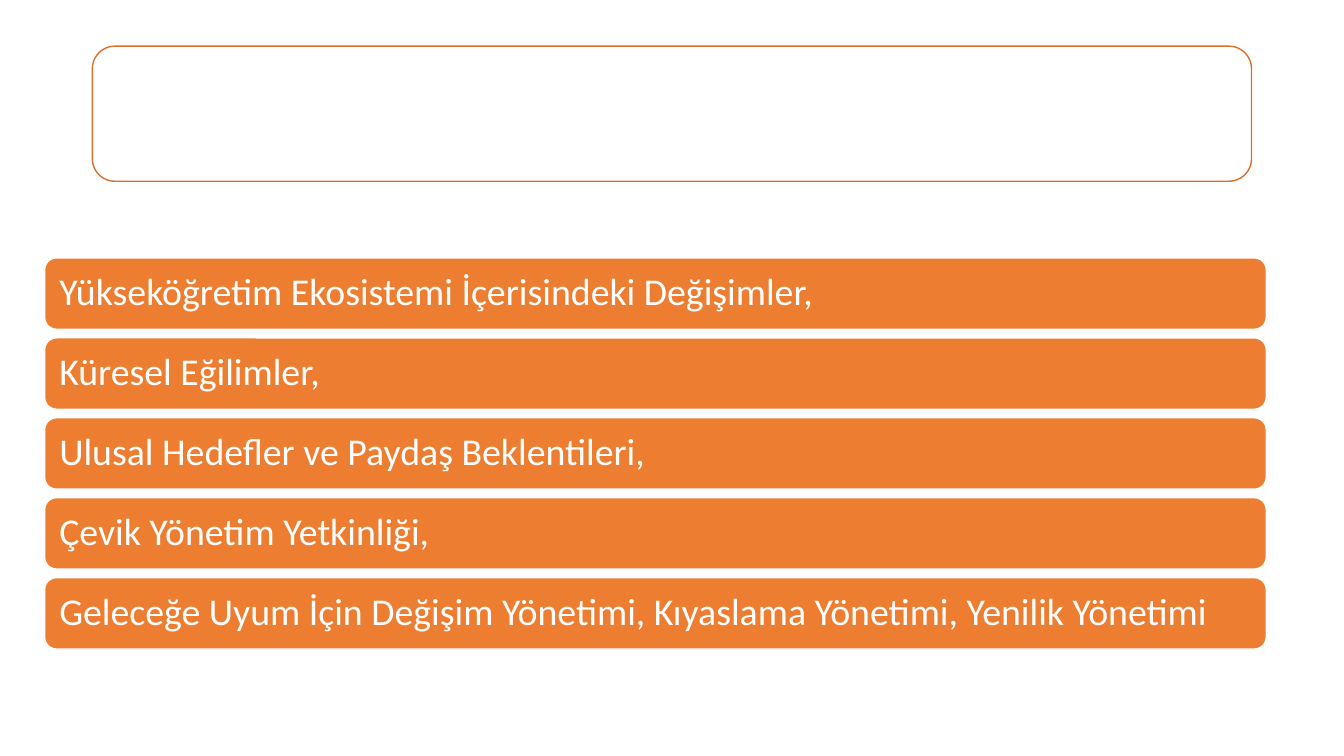
"""Build a slide with an outlined heading frame above five stacked topic bars."""
from dataclasses import dataclass

from pptx import Presentation
from pptx import util as u
from pptx.dml.color import RGBColor
from pptx.enum import shapes, text

COLOURS = {"white": "FFFFFF", "orange": "ED7D31", "rust": "D7712C"}
TOPICS = [
    "Yükseköğretim Ekosistemi İçerisindeki Değişimler,",
    "Küresel Eğilimler,",
    "Ulusal Hedefler ve Paydaş Beklentileri,",
    "Çevik Yönetim Yetkinliği,",
    "Geleceğe Uyum İçin Değişim Yönetimi, Kıyaslama Yönetimi, Yenilik Yönetimi",
]
FIRST_TOP = 184.2
PITCH = 57.1
INSET = u.Pt(8)
FRAME_FORMAT = {
    "word_wrap": True,
    "vertical_anchor": text.MSO_ANCHOR.MIDDLE,
    "margin_left": INSET,
    "margin_right": INSET,
    "margin_top": INSET,
    "margin_bottom": INSET,
}
PARA_FORMAT = {"alignment": text.PP_ALIGN.LEFT, "line_spacing": 0.9}
FONT_FORMAT = {"name": "Calibri", "size": u.Pt(27)}


@dataclass
class Panel:
    left: float
    top: float
    width: float
    height: float
    fill: str
    line: str
    label: str = ""


def colour(name: str) -> RGBColor:
    return RGBColor.from_string(COLOURS[name])


def apply_format(target: object, values: dict) -> None:
    for name, value in values.items():
        setattr(target, name, value)


def write_label(box, label: str) -> None:
    frame = box.text_frame
    apply_format(frame, FRAME_FORMAT)
    para = frame.paragraphs[0]
    apply_format(para, PARA_FORMAT)
    span = para.add_run()
    span.text = label
    apply_format(span.font, FONT_FORMAT)
    span.font.color.rgb = colour("white")


def draw_panel(page, panel: Panel) -> None:
    bounds = (panel.left, panel.top, panel.width, panel.height)
    box = page.shapes.add_shape(
        shapes.MSO_SHAPE.ROUNDED_RECTANGLE, *(u.Pt(length) for length in bounds)
    )
    box.shadow.inherit = False
    box.fill.solid()
    box.fill.fore_color.rgb = colour(panel.fill)
    box.line.color.rgb = colour(panel.line)
    box.line.width = u.Pt(1)
    if panel.label:
        write_label(box, panel.label)


def main() -> None:
    deck = Presentation()
    apply_format(deck, {"slide_width": u.Pt(960), "slide_height": u.Pt(540)})
    page = deck.slides.add_slide(deck.slide_layouts.get_by_name("Blank"))
    heading = Panel(66, 33, 828, 96.5, "white", "rust")
    bars = [
        Panel(31.9, FIRST_TOP + row * PITCH, 872.6, 51, "orange", "white", topic)
        for row, topic in enumerate(TOPICS)
    ]
    for panel in [heading, *bars]:
        draw_panel(page, panel)
    deck.save("out.pptx")


if __name__ == "__main__":
    main()
